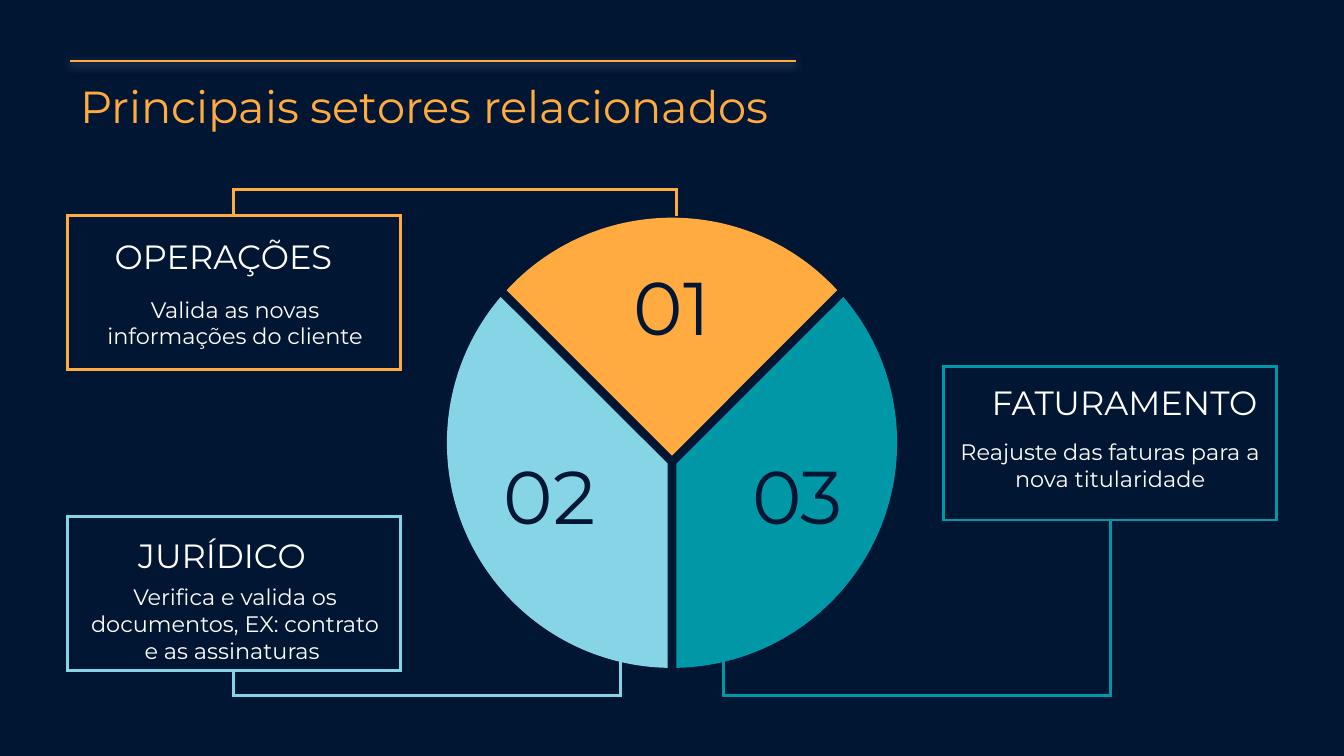
import math

from lxml import etree
from pptx import Presentation, util as u
from pptx.dml.color import RGBColor
from pptx.enum import shapes, text
from pptx.oxml.ns import qn

# The slide is a grid of square cells, 100 columns by 56.25 rows.
CELL = u.Inches(0.1)
COLUMNS, ROWS = 100, 56.25

FONT = "Montserrat"
NAVY, WHITE = "001633", "FFFFFF"
ORANGE, TEAL, SKY = "FFAB40", "0097A7", "85D5E6"

PIE_CENTRE, PIE_RADIUS = (50, 32.95), 16.75
BOX_SIZE = (24.8, 11.45)
LEFT, CENTRE, RIGHT = text.PP_ALIGN.LEFT, text.PP_ALIGN.CENTER, text.PP_ALIGN.RIGHT
TOP, MIDDLE, BOTTOM = (text.MSO_ANCHOR.TOP, text.MSO_ANCHOR.MIDDLE,
                       text.MSO_ANCHOR.BOTTOM)

# Slice: tip, clockwise arc start and arc end.
# Box: corner, heading, heading area, alignment, detail, detail area, bracket.
SECTORS = [
    dict(color=ORANGE, number="01", number_area=(42.35, 18.8, 15.3, 7.9),
         tip=(50, 33.9), start=(37.7, 21.6), end=(62.3, 21.6),
         corner=(5, 16.05), heading="OPERAÇÕES",
         heading_area=(7.55, 16.75, 19.7, 4.8), align=LEFT,
         detail="Valida as novas informações do cliente",
         detail_area=(5.2, 21.25, 24.6, 5.5),
         bracket=[(50.35, 16.1), (50.35, 14.13), (17.4, 14.13), (17.4, 16.1)]),
    dict(color=TEAL, number="03", number_area=(51.7, 32.85, 15.3, 7.9),
         tip=(50.33, 34.5), start=(62.75, 22.1), end=(50.33, 49.7),
         corner=(70.2, 27.25), heading="FATURAMENTO",
         heading_area=(69.95, 28, 24.6, 4.4), align=RIGHT,
         detail="Reajuste das faturas para a nova titularidade",
         detail_area=(70.2, 31.85, 24.8, 5.5),
         bracket=[(82.6, 38.7), (82.6, 51.75), (53.85, 51.75), (53.85, 49)]),
    dict(color=SKY, number="02", number_area=(33.25, 32.85, 15.3, 7.9),
         tip=(49.67, 34.5), start=(49.67, 49.7), end=(37.25, 22.1),
         corner=(5, 38.43), heading="JURÍDICO",
         heading_area=(9.3, 39, 15.8, 4.8), align=LEFT,
         detail="Verifica e valida os documentos, EX: contrato e as assinaturas ",
         detail_area=(5.2, 43.65, 24.6, 5.5),
         bracket=[(17.4, 49.9), (17.4, 51.75), (46.15, 51.75), (46.15, 49)]),
]


def rgb(value):
    return RGBColor.from_string(value)


def cells(*counts):
    return [round(count * CELL) for count in counts]


def paint(shape, fill=None, line=None):
    shape.shadow.inherit = False
    if fill:
        shape.fill.solid()
        shape.fill.fore_color.rgb = rgb(fill)
    else:
        shape.fill.background()
    if line:
        shape.line.color.rgb = rgb(line)
        shape.line.width = u.Pt(1.5)
        etree.SubElement(shape.line._get_or_add_ln(), qn("a:miter"), lim="800000")
    else:
        shape.line.fill.background()


def write(shape, words, size, color, align, anchor):
    frame = shape.text_frame
    frame.word_wrap = True
    frame.auto_size = text.MSO_AUTO_SIZE.NONE
    frame.vertical_anchor = anchor
    frame.margin_left = frame.margin_right = CELL
    frame.margin_top = frame.margin_bottom = CELL
    paragraph = frame.paragraphs[0]
    paragraph.alignment = align
    run = paragraph.add_run()
    run.text = words
    run.font.name = FONT
    run.font.size = u.Pt(size)
    run.font.color.rgb = rgb(color)


def add_label(slide, area, words, size, color, align, anchor):
    box = slide.shapes.add_textbox(*cells(*area))
    write(box, words, size, color, align, anchor)


def add_outline(parent, points, close):
    first, *rest = [cells(*point) for point in points]
    builder = parent.shapes.build_freeform(*first)
    builder.add_line_segments(rest, close=close)
    return builder.convert_to_shape()


def pie_point(angle, radius=PIE_RADIUS):
    return (PIE_CENTRE[0] + radius * math.cos(angle),
            PIE_CENTRE[1] + radius * math.sin(angle))


def bend(shape, segment, first, last):
    """Turn one straight segment of the outline into an arc of the pie."""
    handle = 4 / 3 * math.tan((last - first) / 4)
    reach, turn = PIE_RADIUS * math.hypot(1, handle), math.atan(handle)
    curve = etree.Element(qn("a:cubicBezTo"))
    for angle in (first + turn, last - turn):
        x, y = cells(*pie_point(angle, reach))
        etree.SubElement(curve, qn("a:pt"), x=str(x - shape.left), y=str(y - shape.top))
    curve.append(segment[0])
    segment.getparent().replace(segment, curve)


def add_slice(parent, tip, start, end):
    """A pie slice whose arc is two curves that meet at the pie's outermost point."""
    first, last = [math.atan2(y - PIE_CENTRE[1], x - PIE_CENTRE[0])
                   for x, y in (start, end)]
    last = first + (last - first) % (2 * math.pi)
    quarter = math.pi / 2
    middle = round((first + last) / 2 / quarter) * quarter
    shape = add_outline(parent, [tip, start, pie_point(middle), end], True)
    segments = list(shape._element.iter(qn("a:lnTo")))
    bend(shape, segments[1], first, middle)
    bend(shape, segments[2], middle, last)
    return shape


def add_sector(slide, sector):
    """A group of pie slice, bracket and box."""
    group = slide.shapes.add_group_shape()
    color = sector["color"]
    paint(add_slice(group, sector["tip"], sector["start"], sector["end"]), fill=color)
    paint(add_outline(group, sector["bracket"], False), line=color)
    box = group.shapes.add_shape(shapes.MSO_SHAPE.RECTANGLE,
                                 *cells(*sector["corner"], *BOX_SIZE))
    paint(box, line=color)


def add_sector_labels(slide, sector):
    add_label(slide, sector["heading_area"], sector["heading"], 18, WHITE,
              sector["align"], BOTTOM)
    add_label(slide, sector["detail_area"], sector["detail"], 12, WHITE, CENTRE, MIDDLE)
    add_label(slide, sector["number_area"], sector["number"], 40, NAVY, CENTRE, MIDDLE)


def add_title_rule(slide):
    rule = slide.shapes.add_connector(shapes.MSO_CONNECTOR.STRAIGHT,
                                      *cells(5.2, 4.53, 59.2, 4.53))
    rule.line.color.rgb = rgb(ORANGE)
    rule.line.width = u.Pt(0.75)
    effects = etree.SubElement(rule._element.spPr, qn("a:effectLst"))
    glow = etree.SubElement(effects, qn("a:outerShdw"), blurRad=str(u.Pt(4.5)),
                            dist=str(u.Pt(1.5)), dir="5400000", algn="bl",
                            rotWithShape="0")
    color = etree.SubElement(glow, qn("a:srgbClr"), val=WHITE)
    etree.SubElement(color, qn("a:alpha"), val="50000")


def add_title(slide, words):
    title = slide.shapes.title
    title.left, title.top, title.width, title.height = cells(5, 4.85, 87.5, 5.2)
    write(title, words, 24, ORANGE, LEFT, TOP)


def main():
    presentation = Presentation()
    presentation.slide_width, presentation.slide_height = cells(COLUMNS, ROWS)
    slide = presentation.slides.add_slide(presentation.slide_layouts[5])
    slide.background.fill.solid()
    slide.background.fill.fore_color.rgb = rgb(NAVY)
    add_title_rule(slide)
    add_title(slide, "Principais setores relacionados")
    for sector in SECTORS:
        add_sector(slide, sector)
    for sector in SECTORS:
        add_sector_labels(slide, sector)
    presentation.save("out.pptx")


if __name__ == "__main__":
    main()
